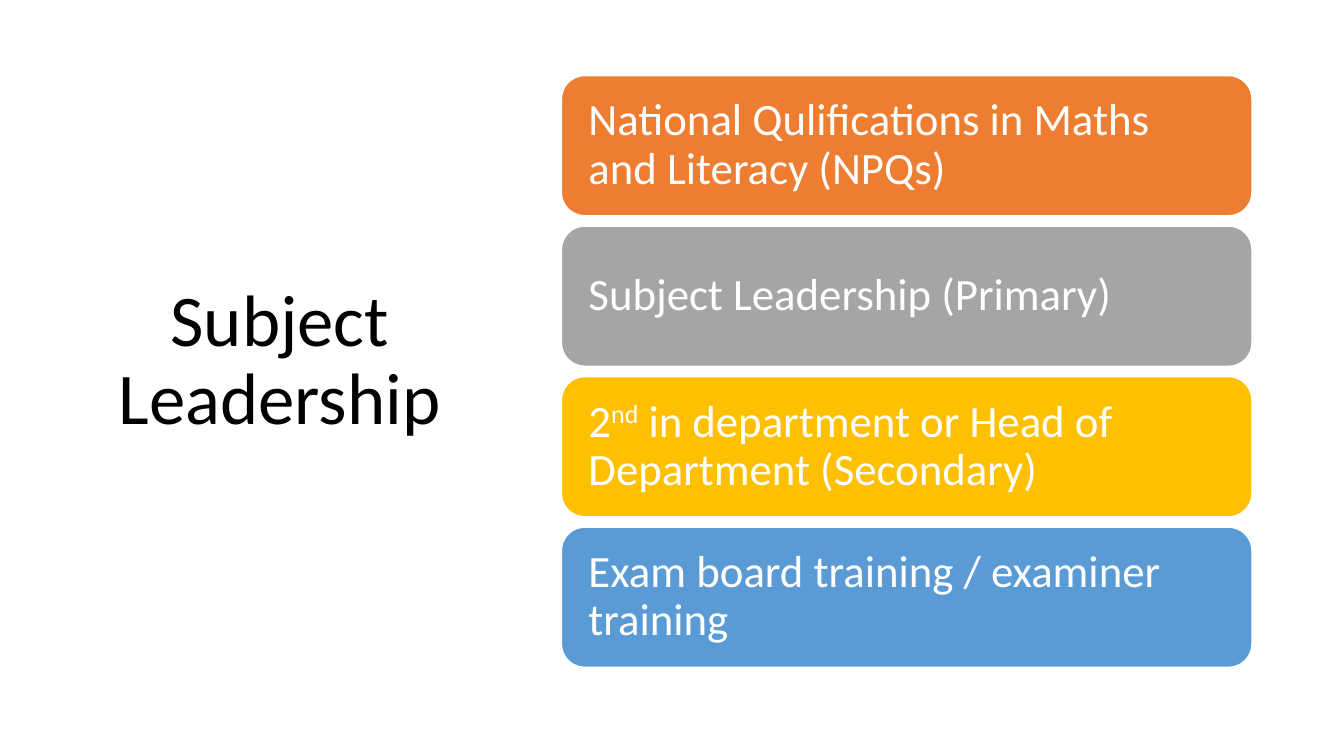
"""Build the Subject Leadership slide: a title beside a stack of coloured bars."""
from dataclasses import dataclass

from pptx import Presentation
from pptx.dml.color import RGBColor
from pptx.enum.shapes import MSO_SHAPE
from pptx.enum.text import MSO_ANCHOR, PP_ALIGN
from pptx.util import Emu, Inches, Pt

COLS, ROWS = 160, 90
WIDE, HIGH = Inches(13.33), Inches(7.5)
HUES = {"orange": "ED7D31", "grey": "A5A5A5", "gold": "FFC000",
        "blue": "5B9BD5", "white": "FFFFFF", "black": "000000"}


@dataclass(frozen=True)
class Area:
    left: float
    top: float
    width: float
    height: float

    def place(self) -> tuple[Emu, ...]:
        return (Emu(round(self.left * WIDE / COLS)), Emu(round(self.top * HIGH / ROWS)),
                Emu(round(self.width * WIDE / COLS)), Emu(round(self.height * HIGH / ROWS)))


@dataclass(frozen=True)
class Piece:
    text: str
    raised: bool = False


@dataclass(frozen=True)
class Bar:
    hue: str
    label: tuple[Piece, ...]


TITLE = Area(11.16, 11.28, 44.28, 73.08)
FIRST = Area(66.84, 9, 82.2, 16.68)
STEP = 17.92
BARS = (
    Bar("orange", (Piece("National Qulifications in Maths and Literacy (NPQs)"),)),
    Bar("grey", (Piece("Subject Leadership (Primary)"),)),
    Bar("gold", (Piece("2"), Piece("nd", True),
                 Piece(" in department or Head of Department (Secondary)"))),
    Bar("blue", (Piece("Exam board training / examiner training"),)),
)
TITLE_FRAME = {"word_wrap": True, "vertical_anchor": MSO_ANCHOR.MIDDLE,
               "margin_bottom": Inches(0.84)}
BAR_FRAME = {"word_wrap": True, "vertical_anchor": MSO_ANCHOR.MIDDLE,
             "margin_left": Inches(0.2), "margin_right": Inches(0.2)}
TITLE_PARA = {"alignment": PP_ALIGN.CENTER, "line_spacing": 0.9}
BAR_PARA = {"alignment": PP_ALIGN.LEFT, "line_spacing": 0.9}


def tint(hue: str) -> RGBColor:
    return RGBColor.from_string(HUES[hue])


def apply(target: object, values: dict) -> None:
    for name, value in values.items():
        setattr(target, name, value)


def write(shape, label: tuple[Piece, ...], frame: dict, para: dict, size: int, hue: str) -> None:
    apply(shape.text_frame, frame)
    line = shape.text_frame.paragraphs[0]
    apply(line, para)
    for piece in label:
        run = line.add_run()
        run.text = piece.text
        apply(run.font, {"name": "Calibri", "size": Pt(size)})
        run.font.color.rgb = tint(hue)
        if piece.raised:
            run.font._element.set("baseline", "30000")


def draw(slide, bar: Bar, row: int) -> None:
    area = Area(FIRST.left, FIRST.top + row * STEP, FIRST.width, FIRST.height)
    shape = slide.shapes.add_shape(MSO_SHAPE.ROUNDED_RECTANGLE, *area.place())
    shape.shadow.inherit = False
    shape.fill.solid()
    shape.fill.fore_color.rgb = tint(bar.hue)
    shape.line.color.rgb = tint("white")
    shape.line.width = Pt(1)
    write(shape, bar.label, BAR_FRAME, BAR_PARA, 32, "white")


def main() -> None:
    deck = Presentation()
    apply(deck, {"slide_width": WIDE, "slide_height": HIGH})
    slide = deck.slides.add_slide(deck.slide_layouts[6])
    title = slide.shapes.add_textbox(*TITLE.place())
    write(title, (Piece("Subject Leadership"),), TITLE_FRAME, TITLE_PARA, 52, "black")
    for row, bar in enumerate(BARS):
        draw(slide, bar, row)
    deck.save("out.pptx")


if __name__ == "__main__":
    main()
